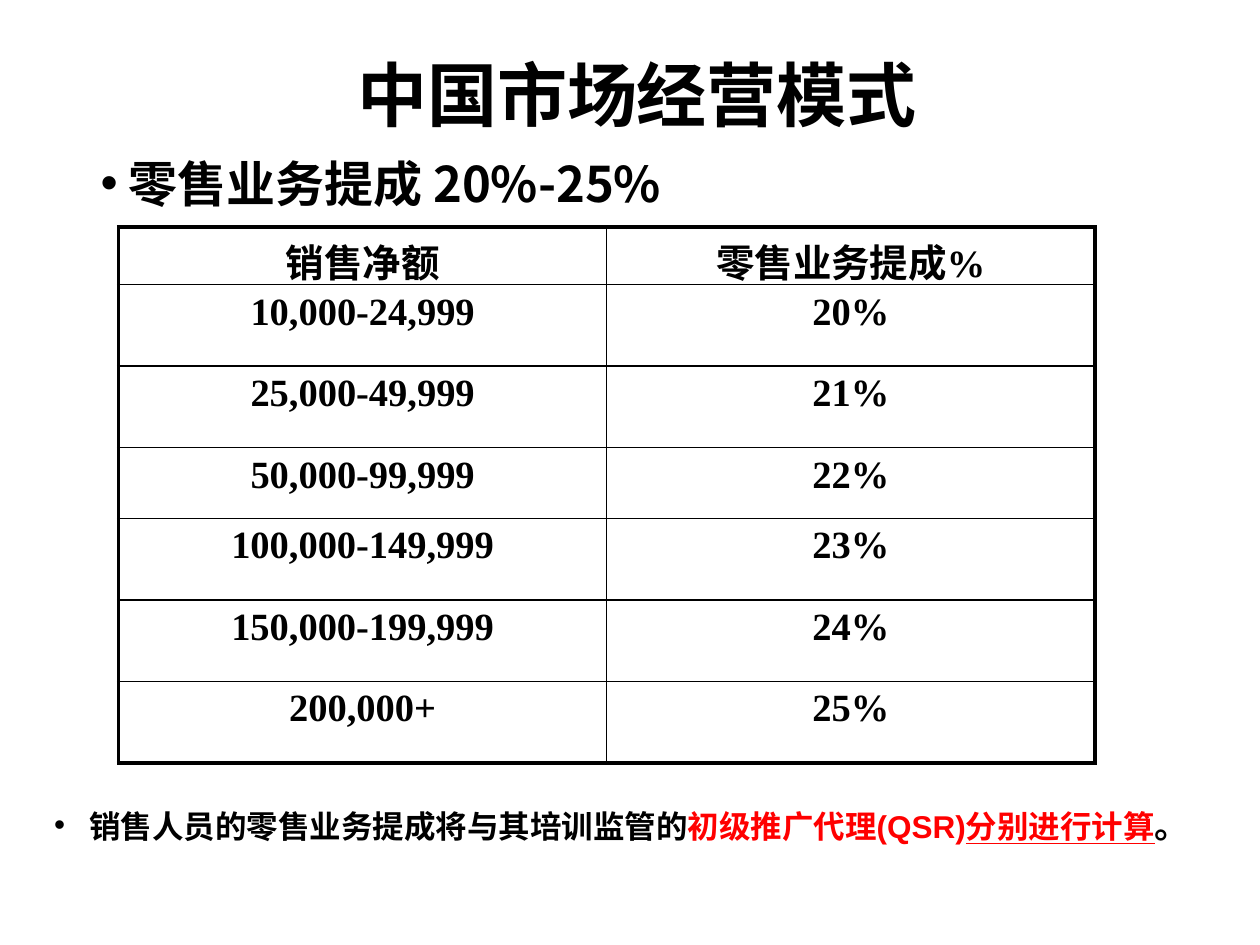
from pptx import Presentation
from pptx.dml.color import RGBColor
from pptx.enum.text import MSO_ANCHOR, PP_ALIGN
from pptx.oxml.ns import qn
from pptx.util import Pt
from lxml import etree

CENTER, LEFT = PP_ALIGN.CENTER, PP_ALIGN.LEFT
MIDDLE, TOP = MSO_ANCHOR.MIDDLE, MSO_ANCHOR.TOP
BLACK = RGBColor(0, 0, 0)
RED = RGBColor(255, 0, 0)
SANS, SERIF, HAN = "Arial", "Times New Roman", "Noto Sans CJK SC"
THICK, THIN = 2.25, 1

ROWS = [
    ("销售净额", "零售业务提成%"),
    ("10,000-24,999", "20%"),
    ("25,000-49,999", "21%"),
    ("50,000-99,999", "22%"),
    ("100,000-149,999", "23%"),
    ("150,000-199,999", "24%"),
    ("200,000+", "25%"),
]
HEIGHTS = [33, 46.6, 46.6, 40.5, 46.6, 46.6, 46.6]


def write(para, text, font=SANS, size=18, color=BLACK, line=None, align=LEFT):
    """Add one bold run to a paragraph."""
    para.alignment = align
    run = para.add_run()
    run.text = text
    run.font.name, run.font.size = font, Pt(size)
    run.font.bold, run.font.underline = True, line
    run.font.color.rgb = color
    etree.SubElement(run.font._element, qn("a:ea"), typeface=HAN)


class Deck:
    def __init__(self):
        self.prs = Presentation()
        self.prs.slide_width, self.prs.slide_height = Pt(720), Pt(540)
        self.slide = self.prs.slides.add_slide(self.prs.slide_layouts[5])

    def title(self, text, x, y, w, h):
        box = self.slide.shapes.title
        box.left, box.top, box.width, box.height = map(Pt, (x, y, w, h))
        box.text_frame.vertical_anchor = MIDDLE
        write(box.text_frame.paragraphs[0], text, size=40, align=CENTER)

    def bullet(self, runs, x, y, w, h, hang=16):
        box = self.slide.shapes.add_textbox(Pt(x), Pt(y), Pt(w), Pt(h))
        box.text_frame.word_wrap = True
        para = box.text_frame.paragraphs[0]
        for text, form in runs:
            write(para, text, **form)
        props = para._p.get_or_add_pPr()
        props.set("marL", str(Pt(hang)))
        props.set("indent", str(-Pt(hang)))
        etree.SubElement(props, qn("a:buFont"), typeface=SANS)
        etree.SubElement(props, qn("a:buChar"), char="•")

    def border(self, cell, widths):
        props = cell._tc.get_or_add_tcPr()
        for spot, (side, width) in enumerate(widths.items()):
            line = etree.Element(qn("a:ln" + side), w=str(Pt(width)))
            fill = etree.SubElement(line, qn("a:solidFill"))
            etree.SubElement(fill, qn("a:srgbClr"), val=str(BLACK))
            props.insert(spot, line)

    def table(self, rows, heights, x, y, w):
        count, cols = len(rows), len(rows[0])
        frame = self.slide.shapes.add_table(
            count, cols, Pt(x), Pt(y), Pt(w), Pt(sum(heights)))
        grid = frame.table
        grid.first_row = grid.horz_banding = False
        for r, (row, height) in enumerate(zip(rows, heights)):
            grid.rows[r].height = Pt(height)
            for c, text in enumerate(row):
                cell = grid.cell(r, c)
                cell.vertical_anchor = TOP
                cell.margin_top, cell.margin_bottom = Pt(3.6), 0
                write(cell.text_frame.paragraphs[0], text,
                      font=SERIF, size=22, align=CENTER)
                cell.fill.background()
                # Thick outer frame, thin inner rules
                edges = {"L": c == 0, "R": c == cols - 1,
                         "T": r == 0, "B": r == count - 1}
                self.border(cell, {side: THICK if outer else THIN
                                   for side, outer in edges.items()})


def main():
    deck = Deck()

    # Heading and rate range
    deck.title("中国市场经营模式", 77.8, 16.6, 572.4, 73.4)
    deck.bullet([("零售业务提成 20%-25%", dict(font=HAN, size=28))],
                50.4, 84.2, 612, 41)

    # Commission table
    deck.table(ROWS, HEIGHTS, 67.7, 129.6, 558)

    # Footnote
    deck.bullet([
        (" 销售人员的零售业务提成将与其培训监管的", {}),
        ("初级推广代理(QSR)", dict(color=RED)),
        ("分别进行计算", dict(color=RED, line=True)),
        ("。", dict(size=20)),
    ], 23.8, 455.8, 696.2, 31.7)

    deck.prs.save("out.pptx")


if __name__ == "__main__":
    main()
